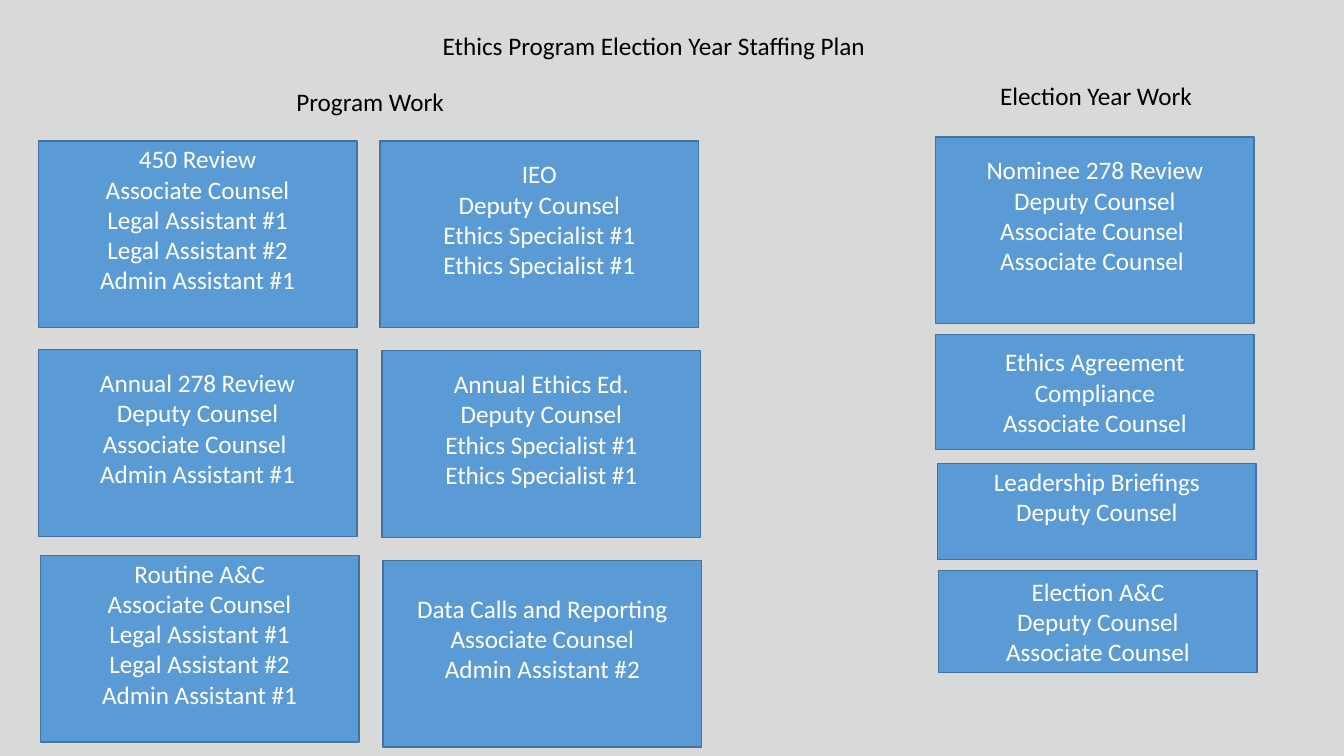
from dataclasses import dataclass

from pptx import Presentation
from pptx import util as u
from pptx.dml.color import RGBColor
from pptx.enum import shapes, text

PX = 9144  # EMU per px, 100 px to the inch
HUES = {"back": "D9D9D9", "box": "5B9BD5", "edge": "43739E",
        "dark": "000000", "light": "FFFFFF"}
WIDTH, TALL = 316, 185
INSET, LINE = 5, 30


@dataclass
class Label:
    words: str
    left: int
    top: int
    width: int
    height: int = 40


@dataclass
class Task:
    left: int
    top: int
    lines: list[str]
    height: int = TALL
    spare: int = LINE  # room kept free under the last line


TITLE = Label("Ethics Program Election Year Staffing Plan", 429, 25, 444)
HEADS = [
    Label("Election Year Work", 982, 75, 213),
    Label("Program Work", 284, 81, 168),
]

DEPUTY, COUNSEL = "Deputy Counsel", "Associate Counsel"
ADMIN = "Admin Assistant #1"
SUPPORT = [COUNSEL, "Legal Assistant #1", "Legal Assistant #2", ADMIN]
EXPERTS = [DEPUTY, "Ethics Specialist #1", "Ethics Specialist #1"]

TASKS = [
    Task(38, 140, ["450 Review", *SUPPORT]),
    Task(40, 551, ["Routine A&C", *SUPPORT]),
    Task(38, 347, ["Annual 278 Review", DEPUTY, COUNSEL + " ", ADMIN]),
    Task(377, 140, ["IEO", *EXPERTS]),
    Task(379, 348, ["Annual Ethics Ed.", *EXPERTS]),
    Task(380, 556, ["Data Calls and Reporting", COUNSEL, "Admin Assistant #2"]),
    Task(928, 136, ["Nominee 278 Review", DEPUTY, COUNSEL + " ", COUNSEL + " "]),
    Task(928, 332, ["Ethics Agreement Compliance", COUNSEL], 114, 0),
    Task(930, 460, ["Leadership Briefings", DEPUTY], 95),
    Task(931, 566, ["Election A&C", DEPUTY, COUNSEL], 101, 0),
]


def hue(name: str) -> RGBColor:
    return RGBColor.from_string(HUES[name])


def write(frame, lines: list[str], *, color: str = "dark",
          align=text.PP_ALIGN.LEFT, anchor=text.MSO_ANCHOR.TOP,
          wrap: bool = False, fit=text.MSO_AUTO_SIZE.SHAPE_TO_FIT_TEXT) -> None:
    frame.word_wrap = wrap
    frame.auto_size = fit
    frame.vertical_anchor = anchor
    for n, line in enumerate(lines):
        para = frame.paragraphs[0] if n == 0 else frame.add_paragraph()
        para.alignment = align
        run = para.add_run()
        run.text = line
        run.font.size = u.Pt(18)
        run.font.name = "Calibri"
        run.font.color.rgb = hue(color)


def add_title(slide, label: Label) -> None:
    title = slide.shapes.title
    title.left, title.top = label.left * PX, label.top * PX
    title.width, title.height = label.width * PX, label.height * PX
    write(title.text_frame, [label.words])


def add_head(slide, label: Label) -> None:
    box = slide.shapes.add_textbox(label.left * PX, label.top * PX,
                                   label.width * PX, label.height * PX)
    write(box.text_frame, [label.words])


def add_task(slide, task: Task) -> None:
    box = slide.shapes.add_shape(shapes.MSO_SHAPE.RECTANGLE,
                                 task.left * PX, task.top * PX,
                                 WIDTH * PX, task.height * PX)
    box.shadow.inherit = False
    box.fill.solid()
    box.fill.fore_color.rgb = hue("box")
    box.line.color.rgb = hue("edge")
    box.line.width = u.Pt(1)
    box.text_frame.margin_bottom = (INSET + task.spare) * PX
    write(box.text_frame, task.lines, color="light",
          align=text.PP_ALIGN.CENTER, anchor=text.MSO_ANCHOR.MIDDLE,
          wrap=True, fit=text.MSO_AUTO_SIZE.NONE)


def main() -> None:
    deck = Presentation()
    deck.slide_width, deck.slide_height = u.Inches(13.33), u.Inches(7.5)
    slide = deck.slides.add_slide(deck.slide_layouts.get_by_name("Title Only"))
    slide.background.fill.solid()
    slide.background.fill.fore_color.rgb = hue("back")
    add_title(slide, TITLE)
    for head in HEADS:
        add_head(slide, head)
    for task in TASKS:
        add_task(slide, task)
    deck.save("out.pptx")


if __name__ == "__main__":
    main()
